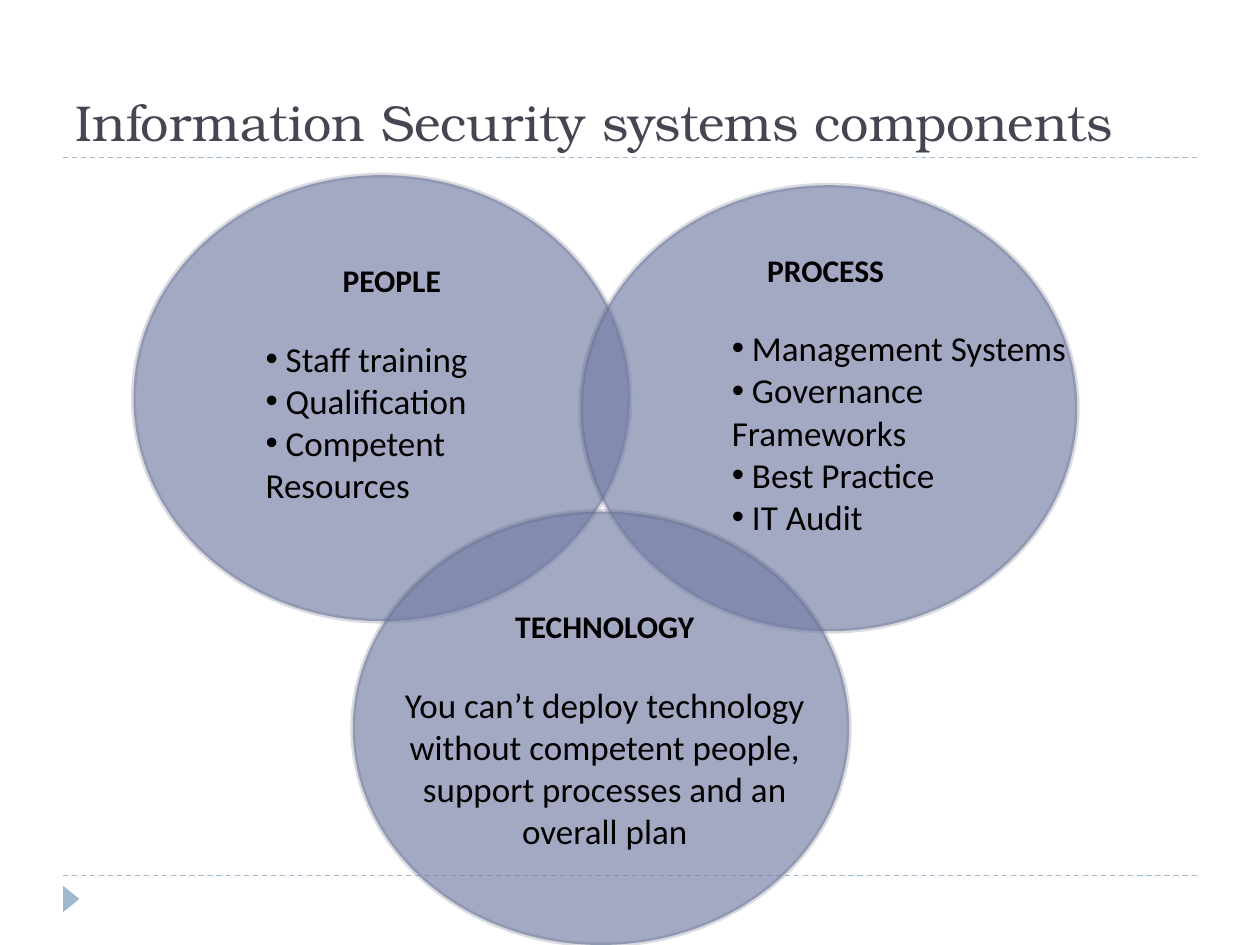
from pptx import Presentation
from pptx.dml.color import RGBColor
from pptx.enum.dml import MSO_LINE_DASH_STYLE as Dash
from pptx.enum.shapes import MSO_CONNECTOR as Link, MSO_SHAPE as Form
from pptx.enum.text import MSO_ANCHOR as Anchor, MSO_AUTO_SIZE as Fit, PP_ALIGN as Align
from pptx.oxml.ns import qn
from pptx.util import Inches, Pt
from lxml.etree import SubElement as Sub

INK = RGBColor(0x46, 0x46, 0x53)
BLACK = RGBColor(0x00, 0x00, 0x00)
DISC = RGBColor(0x72, 0x7C, 0xA3)
RIM = RGBColor(0x54, 0x5C, 0x79)
PALE = RGBColor(0x9F, 0xB8, 0xCD)

COLS, ROWS = 100, 75


def write(par, text, size=20, font="Calibri", color=BLACK, bold=False,
          align=Align.LEFT, after=0, bullet=False, inset=0):
    par.alignment = align
    par.space_after = Pt(after)
    props = par._p.get_or_add_pPr()
    if inset:
        props.set("marL", str(Inches(inset)))
    if bullet:
        Sub(props, qn("a:buFont"), typeface="Arial")
        Sub(props, qn("a:buChar"), char="•")
    run = par.add_run()
    run.text = text
    run.font.size, run.font.name, run.font.bold = Pt(size), font, bold
    run.font.color.rgb = color


def fade(fill, share):
    tint = fill._xPr.find(qn("a:solidFill"))[0]
    Sub(tint, qn("a:alpha"), val=str(share * 1000))


class Page:
    def __init__(self):
        self.deck = Presentation()
        self.deck.slide_width, self.deck.slide_height = Inches(10), Inches(7.5)
        self.col = self.deck.slide_width / COLS
        self.row = self.deck.slide_height / ROWS
        self.slide = self.deck.slides.add_slide(self.deck.slide_layouts[5])
        self.shapes = self.slide.shapes

    def grid(self, x, y, w, h):
        return [round(n * u) for n, u in zip((x, y, w, h), (self.col, self.row) * 2)]

    def title(self, text, *box):
        head = self.shapes.title
        head.left, head.top, head.width, head.height = self.grid(*box)
        frame = head.text_frame
        frame.auto_size, frame.vertical_anchor = Fit.NONE, Anchor.BOTTOM
        write(frame.paragraphs[0], text, size=28.8, font="TeX Gyre Bonum", color=INK)

    def rule(self, y):
        line = self.shapes.add_connector(Link.STRAIGHT, *self.grid(5, y, 95, y))
        line.line.color.rgb, line.line.width = PALE, Pt(0.75)
        line.line.dash_style = Dash.DASH
        Sub(line._element.spPr, qn("a:effectLst"))

    def form(self, kind, color, *box):
        shape = self.shapes.add_shape(kind, *self.grid(*box))
        shape.shadow.inherit = False
        shape.fill.solid()
        shape.fill.fore_color.rgb = color
        shape.line.fill.background()
        return shape

    def mark(self, *box):
        self.form(Form.ISOSCELES_TRIANGLE, PALE, *box).rotation = 90

    def disc(self, *box):
        shape = self.form(Form.OVAL, DISC, *box)
        shape.line.color.rgb, shape.line.width = RIM, Pt(2.75)
        fade(shape.fill, 65)
        fade(shape.line.fill, 22)

    def note(self, head, lines, box, bullet=True, align=Align.CENTER, inset=0):
        frame = self.shapes.add_textbox(*self.grid(*box)).text_frame
        frame.word_wrap, frame.auto_size = True, Fit.SHAPE_TO_FIT_TEXT
        write(frame.paragraphs[0], head, size=18, bold=True, align=align,
              after=22, inset=inset)
        for text in lines:
            write(frame.add_paragraph(), " " + text if bullet else text, bullet=bullet,
                  align=Align.LEFT if bullet else align)


def main():
    page = Page()
    for y in (69.5, 12.5):
        page.rule(y)
    page.mark(4.6, 70.7, 2.1, 1.3)
    page.title("Information Security systems components", 5, 1.7, 90, 10.8)
    for x, y, h in ((10.6, 13.9, 35.4), (46.1, 14.7, 35.4), (28, 40.6, 34.4)):
        page.disc(x, y, 39.4, h)
    page.note("PEOPLE", ["Staff training", "Qualification", "Competent Resources"],
              (20.1, 20.2, 22, 20.5))
    page.note("PROCESS", ["Management Systems", "Governance Frameworks",
                          "Best Practice", "IT Audit"],
              (57.1, 19.4, 29.1, 23.9), align=Align.LEFT, inset=0.28)
    page.note("TECHNOLOGY", ["You can’t deploy technology without competent people, "
                             "support processes and an overall plan"],
              (30.3, 47.7, 35.4, 23.9), bullet=False)
    page.deck.save("out.pptx")


if __name__ == "__main__":
    main()
